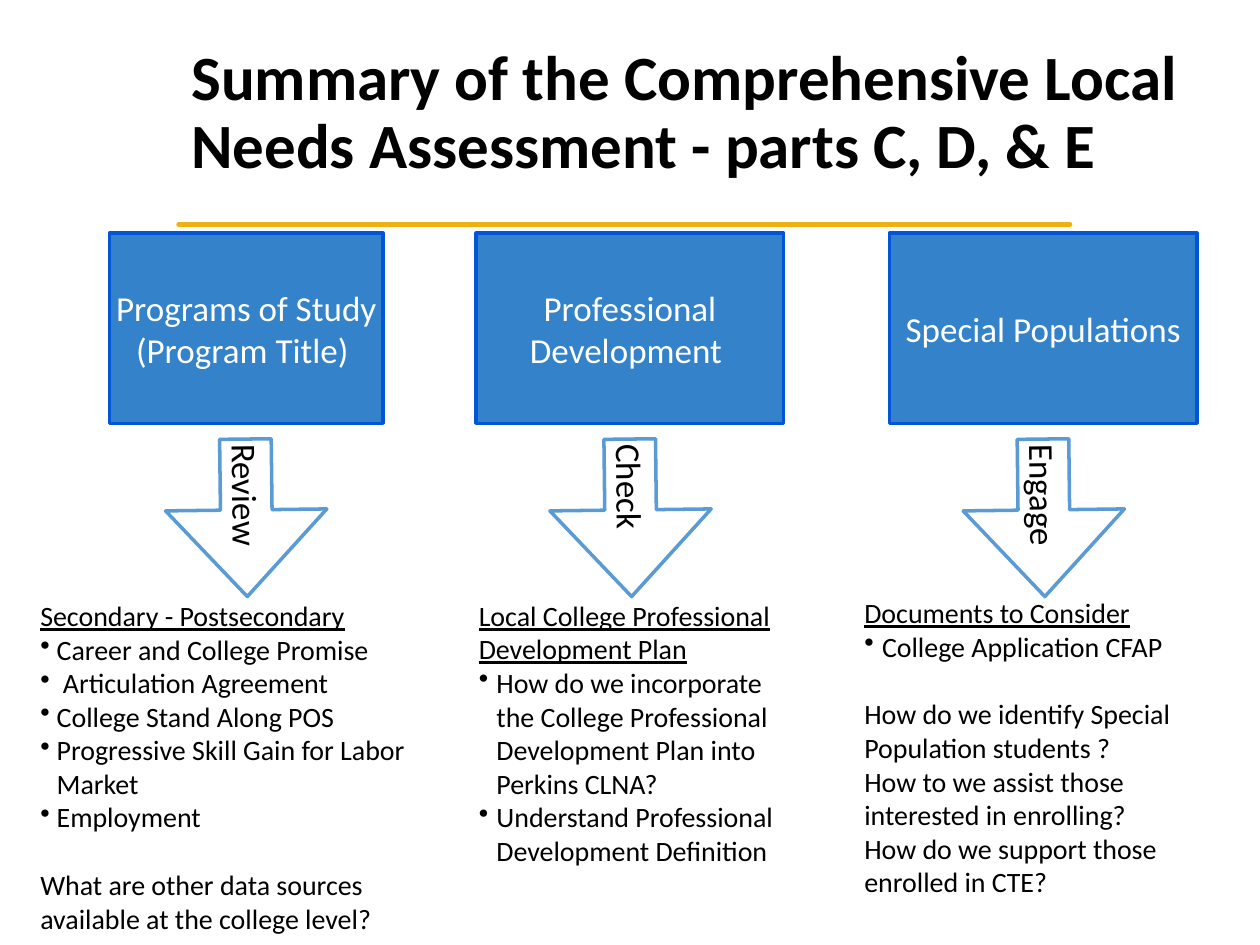
from dataclasses import dataclass

from lxml.etree import SubElement
from pptx import Presentation
from pptx.dml.color import RGBColor
from pptx.enum.shapes import MSO_CONNECTOR, MSO_SHAPE
from pptx.enum.text import MSO_ANCHOR, PP_ALIGN
from pptx.oxml.ns import qn
from pptx.util import Inches, Pt


@dataclass(frozen=True)
class Theme:
    font: str = "Calibri"
    ink: str = "000000"
    paper: str = "FFFFFF"
    gold: str = "EEB111"
    card_fill: str = "3482C9"
    card_line: str = "0056D6"
    arrow_line: str = "5B9BD5"
    title_size: int = 36
    label_size: int = 20
    body_size: int = 16
    blank_line: float = 19.5


THEME = Theme()

# The page is a grid of 100 columns by 75 rows
PAGE_WIDTH, PAGE_HEIGHT = Inches(10), Inches(7.5)
COLUMN, ROW = PAGE_WIDTH / 100, PAGE_HEIGHT / 75
CARD_TOP, CARD_HEIGHT = 18.5, 15.1
ARROW_TOP, ARROW_WIDTH, ARROW_HEIGHT = 34.7, 12.5, 12.8

# Line kinds in the notes
HEADING, BULLET, PLAIN, SPACED = "heading", "bullet", "plain", "spaced"

# Each topic: card (left, width), arrow left, notes box, bullet indent
TOPICS = [
    dict(
        card=(8.7, 21.7), title=["Programs of Study", "(Program Title) "],
        arrow=13.3, action="Review",
        notes=(2.8, 47, 34.1, 27.7), indent=0.13,
        lines=[
            (HEADING, "Secondary - Postsecondary"),
            (BULLET, "Career and College Promise"),
            (BULLET, " Articulation Agreement"),
            (BULLET, "College Stand Along POS"),
            (BULLET, "Progressive Skill Gain for Labor Market"),
            (BULLET, "Employment"),
            (SPACED, "What are other data sources available at the college level?"),
        ],
    ),
    dict(
        card=(37.8, 24.4), title=["Professional Development "],
        arrow=43.8, action="Check",
        notes=(37.6, 47, 24.9, 22.3), indent=0.14,
        lines=[
            (HEADING, "Local College Professional Development Plan"),
            (BULLET, "How do we incorporate the College Professional "
                     "Development Plan into Perkins CLNA?"),
            (BULLET, "Understand Professional Development Definition"),
        ],
    ),
    dict(
        card=(70.6, 24.4), title=["Special Populations"],
        arrow=76.6, action="Engage",
        notes=(68.2, 46.8, 29.4, 25), indent=0.14,
        lines=[
            (HEADING, "Documents to Consider"),
            (BULLET, "College Application CFAP"),
            (SPACED, "How do we identify Special Population students ?"),
            (PLAIN, "How to we assist those interested in enrolling?"),
            (PLAIN, "How do we support those enrolled in CTE?"),
        ],
    ),
]


def color(value):
    return RGBColor.from_string(value)


def grid(left, top, width, height):
    return (round(left * COLUMN), round(top * ROW),
            round(width * COLUMN), round(height * ROW))


def set_frame(box, inset=0.04):
    frame = box.text_frame
    frame.word_wrap = True
    frame.vertical_anchor = MSO_ANCHOR.MIDDLE
    frame.margin_left = frame.margin_right = Inches(inset)
    frame.margin_top = frame.margin_bottom = Inches(inset)
    return frame


def next_para(frame, index):
    return frame.paragraphs[0] if index == 0 else frame.add_paragraph()


def add_span(para, text, size, ink, bold=False, underline=False):
    span = para.add_run()
    span.text = text
    span.font.name = THEME.font
    span.font.size = Pt(size)
    span.font.color.rgb = color(ink)
    span.font.bold = bold
    span.font.underline = underline


def add_bullet(para, indent):
    properties = para._p.get_or_add_pPr()
    properties.set("marL", str(Inches(indent)))
    properties.set("indent", str(-Inches(indent)))
    SubElement(properties, qn("a:buChar")).set("char", "•")


def add_block(page, kind, area, fill, line):
    block = page.shapes.add_shape(kind, *area)
    block.shadow.inherit = False
    block.fill.solid()
    block.fill.fore_color.rgb = color(fill)
    block.line.color.rgb = color(line)
    block.line.width = Pt(2)
    return block


def add_title(page, area):
    frame = set_frame(page.shapes.add_textbox(*area), inset=0.1)
    para = frame.paragraphs[0]
    para.line_spacing = 0.9
    add_span(para, "Summary of the Comprehensive Local Needs Assessment - parts C, D, & E",
             THEME.title_size, THEME.ink, bold=True)


def add_rule(page, area):
    left, top, width, height = area
    rule = page.shapes.add_connector(MSO_CONNECTOR.STRAIGHT, left, top,
                                     left + width, top + height)
    rule.line.color.rgb = color(THEME.gold)
    rule.line.width = Pt(3)
    rule.line._get_or_add_ln().set("cap", "rnd")
    SubElement(rule._element.spPr, qn("a:effectLst"))


def add_card(page, area, title):
    card = add_block(page, MSO_SHAPE.RECTANGLE, area, THEME.card_fill, THEME.card_line)
    frame = set_frame(card)
    for index, text in enumerate(title):
        para = next_para(frame, index)
        para.alignment = PP_ALIGN.CENTER
        add_span(para, text, THEME.label_size, THEME.paper)


def add_arrow(page, area, action):
    arrow = add_block(page, MSO_SHAPE.RIGHT_ARROW, area, THEME.paper, THEME.arrow_line)
    arrow.rotation = 89.3
    arrow.adjustments[0] = 0.32
    arrow.adjustments[1] = 0.55
    para = set_frame(arrow).paragraphs[0]
    para.alignment = PP_ALIGN.LEFT
    add_span(para, action, THEME.label_size, THEME.ink)


def add_notes(page, area, lines, indent):
    frame = set_frame(page.shapes.add_textbox(*area))
    for index, (kind, text) in enumerate(lines):
        para = next_para(frame, index)
        if kind == BULLET:
            add_bullet(para, indent)
        elif kind == SPACED:
            para.space_before = Pt(THEME.blank_line)
        add_span(para, text, THEME.body_size, THEME.ink, underline=kind == HEADING)


def add_topic(page, topic):
    left, width = topic["card"]
    add_card(page, grid(left, CARD_TOP, width, CARD_HEIGHT), topic["title"])
    add_notes(page, grid(*topic["notes"]), topic["lines"], topic["indent"])
    add_arrow(page, grid(topic["arrow"], ARROW_TOP, ARROW_WIDTH, ARROW_HEIGHT),
              topic["action"])


def main():
    deck = Presentation()
    deck.slide_width, deck.slide_height = PAGE_WIDTH, PAGE_HEIGHT
    page = deck.slides.add_slide(deck.slide_layouts[6])

    # Heading with its gold rule
    add_rule(page, grid(14.2, 17.8, 70.7, 0))
    add_title(page, grid(14.2, 1.8, 80.5, 14.5))

    # Three topics, each a card, an arrow and notes
    for topic in TOPICS:
        add_topic(page, topic)

    deck.save("out.pptx")


if __name__ == "__main__":
    main()
